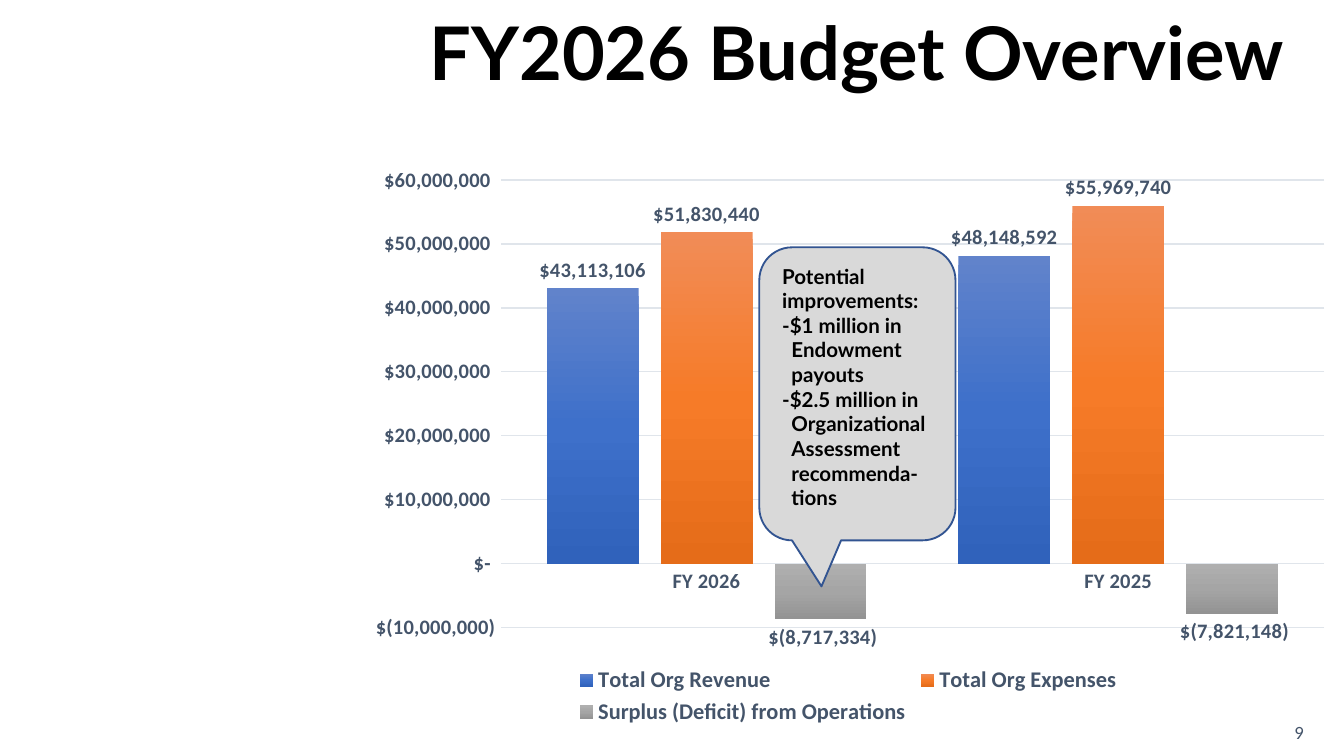
import copy

import pptx
import pptx.chart.data
import pptx.dml.color
import pptx.enum.chart
import pptx.enum.shapes
import pptx.enum.text
import pptx.oxml
import pptx.util

Pt = pptx.util.Pt
ALIGN = pptx.enum.text.PP_ALIGN
ANCHOR = pptx.enum.text.MSO_ANCHOR
CHART = pptx.enum.chart

SLATE, BLACK, GRID = "44546A", "000000", "E0E5EB"
DOLLARS = r'_("$"* #,##0_);_("$"* \(#,##0\);_("$"* "-"_);_(@_)'
YEARS = ["FY 2026", "FY 2025"]
SERIES = [
    ("Total Org Revenue", (43113106, 48148592), ("6183CB", "3E70CA", "3062BB")),
    ("Total Org Expenses", (51830440, 55969740), ("F18C57", "F67B28", "E56C19")),
    ("Surplus (Deficit) from Operations", (-8717334, -7821148),
     ("AFAFAF", "A5A5A5", "939393")),
]
IMPROVEMENTS = [  # text, left indent
    ("Potential improvements:", 0),
    ("-$1 million in", 0),
    ("Endowment", 5),
    ("payouts", 5),
    ("-$2.5 million in", 0),
    ("Organizational", 5),
    ("Assessment", 5),
    ("recommenda-", 5),
    ("tions", 5),
]
PLOT_LAYOUT = {"x": 0.15, "y": 0.04, "w": 0.83, "h": 0.78}


def color(hex_code):
    return pptx.dml.color.RGBColor.from_string(hex_code)


def set_all(target, values):
    for name, value in values.items():
        setattr(target, name, value)


class BudgetSlide:
    def __init__(self, deck):
        self.slide = deck.slides.add_slide(deck.slide_layouts[6])
        self.chart_font = {"name": "Calibri", "bold": True, "size": Pt(11)}

    def style_font(self, font, hex_code, **values):
        set_all(font, values)
        font.color.rgb = color(hex_code)

    def fill_text(self, frame, lines, hex_code, align, anchor, **font):
        set_all(frame, {"word_wrap": True, "vertical_anchor": anchor})
        for index, (text, indent) in enumerate(lines):
            para = frame.paragraphs[0] if index == 0 else frame.add_paragraph()
            para.alignment = align
            if indent:
                para._p.get_or_add_pPr().set("marL", str(Pt(indent)))
            span = para.add_run()
            span.text = text
            self.style_font(span.font, hex_code, **font)

    def text(self, place, text, hex_code, **font):
        box = self.slide.shapes.add_textbox(*map(Pt, place))
        self.fill_text(box.text_frame, [(text, 0)], hex_code, ALIGN.CENTER,
                       ANCHOR.MIDDLE, **font)

    def callout(self, place, adjustments, lines):
        kind = pptx.enum.shapes.MSO_SHAPE.ROUNDED_RECTANGULAR_CALLOUT
        box = self.slide.shapes.add_shape(kind, *map(Pt, place))
        box.shadow.inherit = False
        for index, value in enumerate(adjustments):
            box.adjustments[index] = value
        box.fill.solid()
        box.fill.fore_color.rgb = color("D9D9D9")
        box.line.color.rgb = color("325491")
        box.line.width = Pt(1)
        self.fill_text(box.text_frame, lines, BLACK, ALIGN.LEFT, ANCHOR.TOP,
                       name="Lato", bold=True, size=Pt(11))

    def gradient(self, fill, hex_codes):
        """Fill from top to bottom with three evenly spaced colours."""
        fill.gradient()
        fill.gradient_angle = 270
        first = fill.gradient_stops[0]._gs
        first.addnext(copy.deepcopy(first))
        for index, (stop, code) in enumerate(zip(fill.gradient_stops, hex_codes)):
            stop.position = index / 2
            stop.color.rgb = color(code)

    def grid_line(self, line):
        line.color.rgb = color(GRID)
        line.width = Pt(0.75)

    def place_plot(self, chart):
        """Fix the inner plot area as fractions of the chart."""
        plot_area = chart._chartSpace.chart.plotArea
        for old in plot_area.findall(pptx.oxml.ns.qn("c:layout")):
            plot_area.remove(old)
        values = {"layoutTarget": "inner", "xMode": "edge", "yMode": "edge",
                  **PLOT_LAYOUT}
        marks = "".join(f'<c:{key} val="{value}"/>' for key, value in values.items())
        plot_area.insert(0, pptx.oxml.parse_xml(
            f'<c:layout {pptx.oxml.ns.nsdecls("c")}>'
            f"<c:manualLayout>{marks}</c:manualLayout></c:layout>"))

    def column_chart(self, place):
        data = pptx.chart.data.CategoryChartData()
        data.categories = YEARS
        for name, values, _ in SERIES:
            data.add_series(name, values)
        chart = self.slide.shapes.add_chart(
            CHART.XL_CHART_TYPE.COLUMN_CLUSTERED, *map(Pt, place), data).chart
        set_all(chart, {"has_title": False, "has_legend": True})
        self.style_font(chart.font, BLACK, name="Calibri", size=Pt(10))
        set_all(chart.legend, {"position": CHART.XL_LEGEND_POSITION.BOTTOM,
                               "include_in_layout": False})
        self.style_font(chart.legend.font, SLATE,
                        **{**self.chart_font, "size": Pt(12)})

        for axis in (chart.category_axis, chart.value_axis):
            set_all(axis, {"major_tick_mark": CHART.XL_TICK_MARK.NONE,
                           "minor_tick_mark": CHART.XL_TICK_MARK.NONE})
            self.style_font(axis.tick_labels.font, SLATE, **self.chart_font)
        self.grid_line(chart.category_axis.format.line)
        set_all(chart.value_axis, {"minimum_scale": -10_000_000,
                                   "maximum_scale": 60_000_000,
                                   "major_unit": 10_000_000})
        self.grid_line(chart.value_axis.major_gridlines.format.line)
        chart.value_axis.format.line.fill.background()
        number = {"number_format": DOLLARS, "number_format_is_linked": False}
        set_all(chart.value_axis.tick_labels, number)

        plot = chart.plots[0]
        set_all(plot, {"gap_width": 100, "overlap": -24, "vary_by_categories": False})
        for series, (_, _, hex_codes) in zip(plot.series, SERIES):
            series.invert_if_negative = False
            self.gradient(series.format.fill, hex_codes)
            labels = series.data_labels
            set_all(labels, {**number, "show_value": True,
                             "position": CHART.XL_LABEL_POSITION.OUTSIDE_END})
            self.style_font(labels.font, SLATE, **self.chart_font)
        self.place_plot(chart)


def main():
    deck = pptx.Presentation()
    set_all(deck, {"slide_width": Pt(720), "slide_height": Pt(405)})
    page = BudgetSlide(deck)
    page.column_chart((188.6, 84.2, 531.4, 307.4))
    page.text((210.2, 0, 497.5, 54), "FY2026 Budget Overview", BLACK,
              name="Lato", bold=True, size=Pt(39.6))
    page.text((671.8, 378.7, 48.2, 26.6), "9", SLATE, name="Calibri", size=Pt(10))
    page.callout((406.8, 132.5, 105.1, 157), (-0.183, 0.657, 0.167), IMPROVEMENTS)
    deck.save("out.pptx")


if __name__ == "__main__":
    main()
